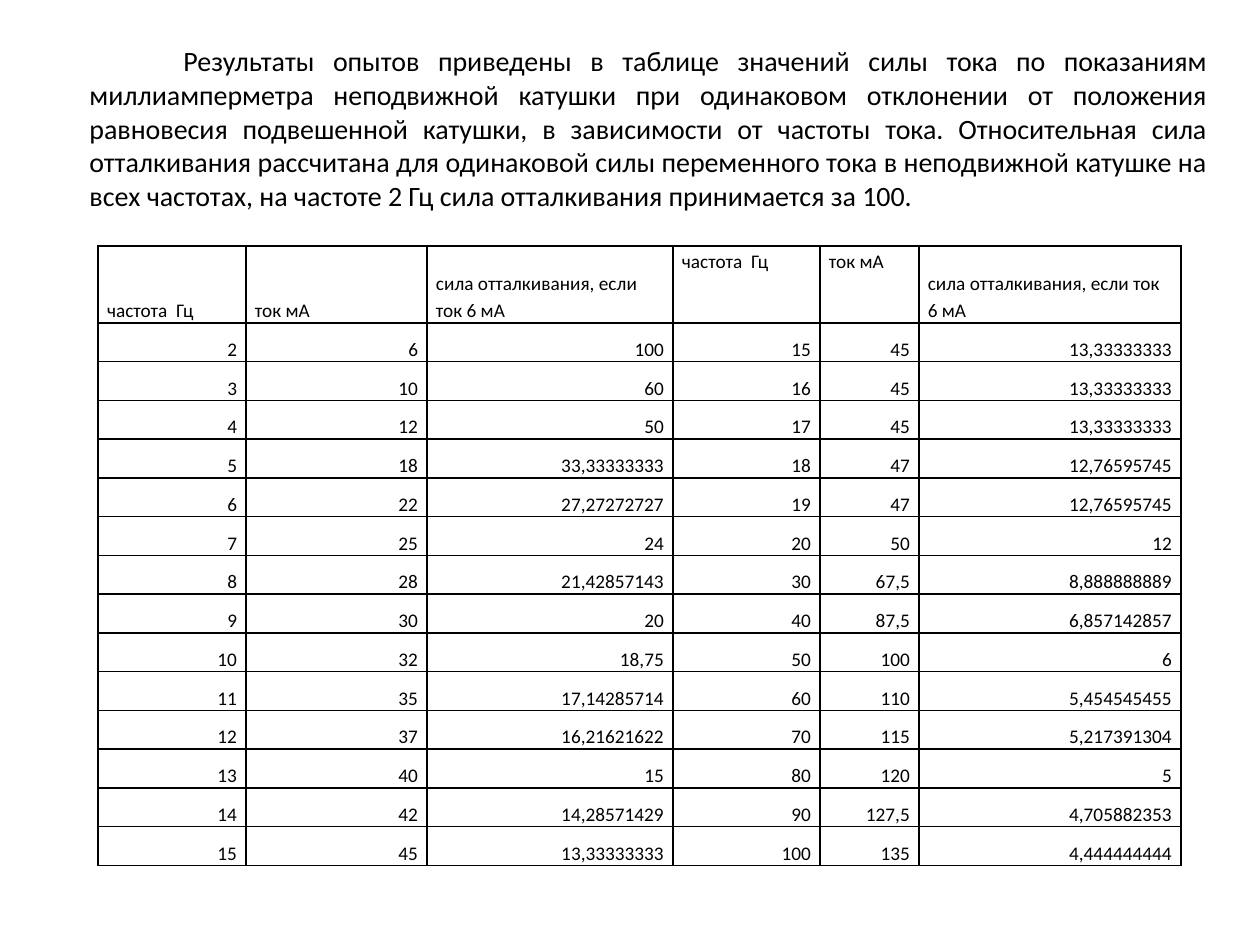
from lxml import etree
from pptx import Presentation, util as u
from pptx.dml.color import RGBColor
from pptx.enum import text as t
from pptx.oxml import ns

PX = u.Inches(1) // 126
BLACK = RGBColor(0, 0, 0)
LEFT, RIGHT, FULL = t.PP_ALIGN.LEFT, t.PP_ALIGN.RIGHT, t.PP_ALIGN.JUSTIFY


def write(frame, words, size=11, align=LEFT, lead=1.0):
    para = frame.paragraphs[0]
    para.alignment = align
    para.line_spacing = lead
    run = para.add_run()
    run.text = words
    run.font.name = "Calibri"
    run.font.size = u.Pt(size)
    run.font.color.rgb = BLACK
    return para


def edge(cell):
    props = cell._tc.get_or_add_tcPr()
    for i, side in enumerate(("lnL", "lnR", "lnT", "lnB")):
        line = etree.Element(ns.qn("a:" + side), w=str(u.Pt(1)))
        fill = etree.SubElement(line, ns.qn("a:solidFill"))
        etree.SubElement(fill, ns.qn("a:srgbClr"), val=str(BLACK))
        props.insert(i, line)


prs = Presentation()
prs.slide_width, prs.slide_height = 1260 * PX, 945 * PX
slide = prs.slides.add_slide(prs.slide_layouts[6])

# Introduction
box = slide.shapes.add_textbox(29 * PX, 29 * PX, 1191 * PX, 315 * PX)
frame = box.text_frame
frame.word_wrap = True
frame.margin_top = 15 * PX
para = write(
    frame,
    "Результаты опытов приведены в таблице значений силы тока по показаниям "
    "миллиамперметра неподвижной катушки при одинаковом отклонении от положения "
    "равновесия подвешенной катушки, в зависимости от частоты тока. Относительная "
    "сила отталкивания рассчитана для одинаковой силы переменного тока в "
    "неподвижной катушке на всех частотах, на частоте 2 Гц сила отталкивания "
    "принимается за 100.",
    size=16, align=FULL)
props = para._p.get_or_add_pPr()
props.set("marL", str(48 * PX))
props.set("indent", str(94 * PX))

# Table of measurements
HEAD = ["частота  Гц", "ток мА", "сила отталкивания, если ток 6 мА"] * 2
DATA = """
2 6 100 15 45 13,33333333
3 10 60 16 45 13,33333333
4 12 50 17 45 13,33333333
5 18 33,33333333 18 47 12,76595745
6 22 27,27272727 19 47 12,76595745
7 25 24 20 50 12
8 28 21,42857143 30 67,5 8,888888889
9 30 20 40 87,5 6,857142857
10 32 18,75 50 100 6
11 35 17,14285714 60 110 5,454545455
12 37 16,21621622 70 115 5,217391304
13 40 15 80 120 5
14 42 14,28571429 90 127,5 4,705882353
15 45 13,33333333 100 135 4,444444444
"""
rows = [HEAD] + [line.split() for line in DATA.strip().splitlines()]
wide = [148, 181, 246, 147, 99, 262]
top, tall = 77, 620

table = slide.shapes.add_table(
    len(rows), len(wide), 98 * PX, 246 * PX, sum(wide) * PX, tall * PX).table
table.first_row = table.horz_banding = False
for col, width in zip(table.columns, wide):
    col.width = width * PX
for row in table.rows:
    row.height = (tall - top) * PX // (len(rows) - 1)
table.rows[0].height = top * PX

for r, row in enumerate(rows):
    for c, words in enumerate(row):
        cell = table.cell(r, c)
        cell.fill.background()
        cell.margin_left = cell.margin_right = 9 * PX
        cell.margin_top = cell.margin_bottom = 0
        high = r == 0 and c in (3, 4)
        cell.vertical_anchor = t.MSO_ANCHOR.TOP if high else t.MSO_ANCHOR.BOTTOM
        write(cell.text_frame, words, align=RIGHT if r else LEFT, lead=1.15)
        edge(cell)

prs.save("out.pptx")
